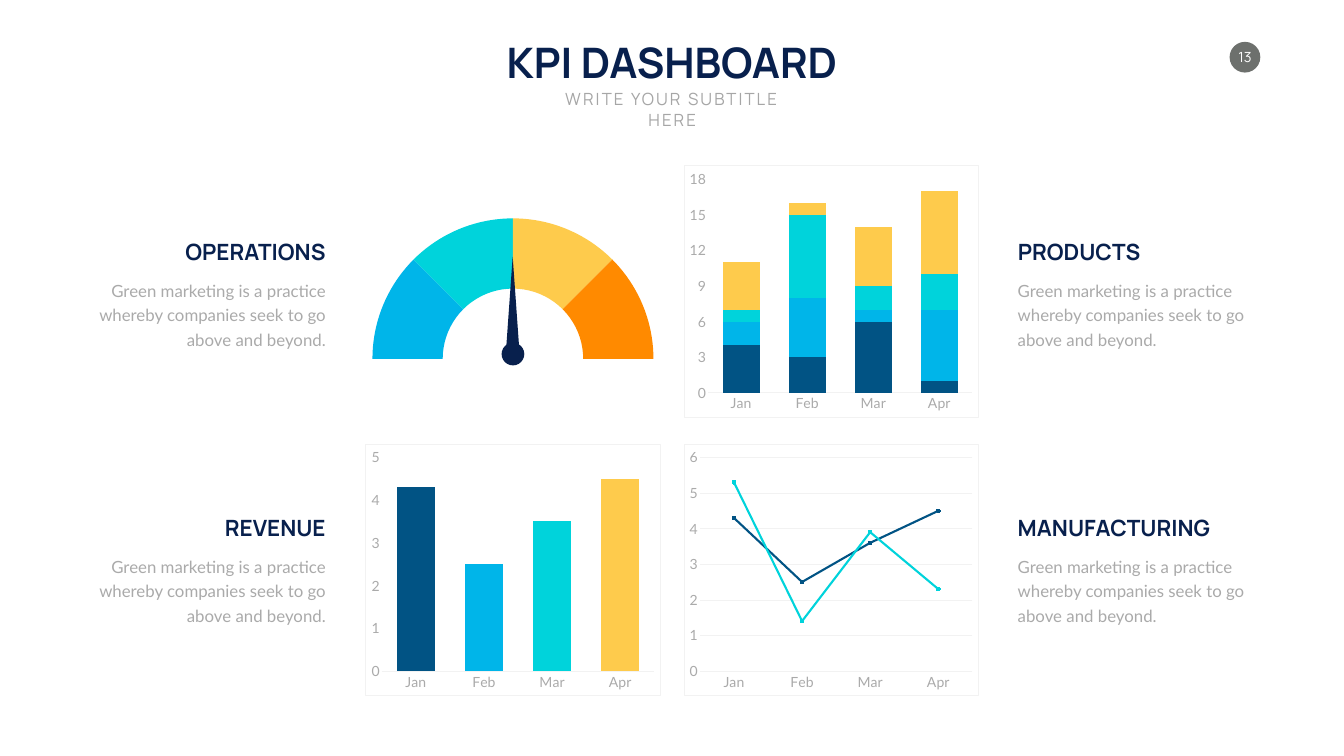
from lxml import etree
from pptx import Presentation
from pptx.chart.data import CategoryChartData
from pptx.dml.color import RGBColor
from pptx.enum import chart as ch, shapes, text
from pptx.oxml import parse_xml
from pptx.oxml.ns import nsdecls
from pptx.util import Inches, Pt

NAVY = RGBColor(0x08, 0x20, 0x4D)
BLUE = RGBColor(0x01, 0x53, 0x84)
SKY = RGBColor(0x00, 0xB5, 0xE9)
CYAN = RGBColor(0x00, 0xD3, 0xDB)
YELLOW = RGBColor(0xFE, 0xCB, 0x4C)
ORANGE = RGBColor(0xFF, 0x8A, 0x00)
GREY = RGBColor(0xAA, 0xAA, 0xAA)
SUBTITLE_GREY = RGBColor(0xA6, 0xA6, 0xA6)
BADGE_GREY = RGBColor(0x6D, 0x70, 0x6D)
PALE = RGBColor(0xF2, 0xF2, 0xF2)
WHITE = RGBColor(0xFF, 0xFF, 0xFF)

LEFT, CENTER, RIGHT = text.PP_ALIGN.LEFT, text.PP_ALIGN.CENTER, text.PP_ALIGN.RIGHT
MONTHS = ["Jan", "Feb", "Mar", "Apr"]
CHART_W, CHART_H = 5.85, 5
BODY = "Green marketing is a practice whereby companies seek to go above and beyond."

prs = Presentation()
prs.slide_width, prs.slide_height = Inches(26.66), Inches(15)
s = prs.slides.add_slide(prs.slide_layouts[6])


def add_text(box, words, size, font, color, align, bold=False, wrap=False):
    sp = s.shapes.add_textbox(*map(Inches, box))
    tf = sp.text_frame
    tf.word_wrap = wrap
    tf.auto_size = text.MSO_AUTO_SIZE.SHAPE_TO_FIT_TEXT
    p = tf.paragraphs[0]
    p.text, p.alignment = words, align
    p.font.size, p.font.name, p.font.bold = Pt(size), font, bold
    p.font.color.rgb = color
    return p


def add_chart(kind, box, cats, rows):
    """Add a chart without title or legend, in grey 20 pt Lato."""
    data = CategoryChartData()
    data.categories = cats
    for i, row in enumerate(rows, 1):
        data.add_series(f"Series {i}", row)
    chart = s.shapes.add_chart(kind, *map(Inches, box), data).chart
    chart.has_title = chart.has_legend = False
    chart.font.size, chart.font.name = Pt(20), "Lato"
    chart.font.color.rgb = GREY
    return chart


# Header and page badge
add_text((9.78, 0.67, 7.1, 1.11), "KPI DASHBOARD", 60, "Manrope", NAVY, CENTER, bold=True)
p = add_text((10.62, 1.72, 5.43, 0.5), "WRITE YOUR SUBTITLE HERE", 24, "Manrope",
             SUBTITLE_GREY, CENTER, wrap=True)
p.runs[0].font._element.set("spc", "300")

badge = s.shapes.add_shape(shapes.MSO_SHAPE.OVAL, *map(Inches, (24.39, 0.83, 0.61, 0.61)))
badge.shadow.inherit = False
badge.fill.solid()
badge.fill.fore_color.rgb = BADGE_GREY
badge.line.fill.background()
tf = badge.text_frame
tf.margin_left = tf.margin_right = tf.margin_top = tf.margin_bottom = 0
tf.word_wrap = False
tf.vertical_anchor = text.MSO_ANCHOR.MIDDLE
p = tf.paragraphs[0]
p.text, p.alignment = "13", CENTER
p.font.size, p.font.name = Pt(20), "Manrope"
p.font.color.rgb = WHITE

# Captions beside the charts: heading, heading width, outer edge, top, alignment
for heading, width, edge, top, align in [
    ("OPERATIONS", 3.06, 6.56, 4.68, RIGHT),
    ("REVENUE", 2.2, 6.56, 10.16, RIGHT),
    ("PRODUCTS", 2.65, 20.09, 4.68, LEFT),
    ("MANUFACTURING", 4.2, 20.09, 10.16, LEFT),
]:
    shift = 1 if align == RIGHT else 0
    add_text((edge - shift * width, top, width, 0.64), heading, 32, "Manrope",
             NAVY, align, bold=True)
    p = add_text((edge - shift * 4.9, top + 0.75, 4.9, 1.52), BODY, 24, "Lato",
                 GREY, align, wrap=True)
    p.line_spacing, p.space_before = Pt(35), Pt(4.8)

# Gauge: the upper half of a doughnut, with a needle
gauge = add_chart(ch.XL_CHART_TYPE.DOUGHNUT, (7.25, 4.1, CHART_W, 6.04),
                  [str(n) for n in range(1, 9)], [[12] * 8])
plot = gauge.plots[0]
for tag, value in (("firstSliceAng", 270), ("holeSize", 50)):
    for old in plot._element.xpath(f"c:{tag}"):
        plot._element.remove(old)
    plot._element.append(parse_xml(f'<c:{tag} {nsdecls("c")} val="{value}"/>'))
for i, color in enumerate([SKY, CYAN, YELLOW, ORANGE] + [None] * 4):
    fmt = plot.series[0].points[i].format
    fmt.line.fill.background()
    if color is None:
        fmt.fill.background()
    else:
        fmt.fill.solid()
        fmt.fill.fore_color.rgb = color

for kind, box in [
    (shapes.MSO_SHAPE.ISOSCELES_TRIANGLE, (10.04, 5.09, 0.26, 1.83)),
    (shapes.MSO_SHAPE.OVAL, (9.95, 6.8, 0.45, 0.45)),
]:
    sp = s.shapes.add_shape(kind, *map(Inches, box))
    sp.shadow.inherit = False
    sp.fill.solid()
    sp.fill.fore_color.rgb = NAVY
    sp.line.fill.background()

# Charts with axes
products = add_chart(ch.XL_CHART_TYPE.COLUMN_STACKED, (13.56, 3.28, CHART_W, CHART_H), MONTHS,
                     [(4, 3, 6, 1), (2, 5, 1, 6), (1, 7, 2, 3), (4, 1, 5, 7)])
revenue = add_chart(ch.XL_CHART_TYPE.COLUMN_CLUSTERED, (7.25, 8.8, CHART_W, CHART_H), MONTHS,
                    [(4.3, 2.5, 3.5, 4.5)])
manufacturing = add_chart(ch.XL_CHART_TYPE.LINE_MARKERS, (13.56, 8.8, CHART_W, CHART_H), MONTHS,
                          [(4.3, 2.5, 3.6, 4.5), (5.3, 1.4, 3.9, 2.3)])

for chart, top, step in [(products, 18, 3), (revenue, 5, 1), (manufacturing, 6, 1)]:
    cat, val = chart.category_axis, chart.value_axis
    for axis in (cat, val):
        axis.major_tick_mark = axis.minor_tick_mark = ch.XL_TICK_MARK.NONE
        axis.tick_labels.font.size, axis.tick_labels.font.name = Pt(20), "Lato"
        axis.tick_labels.font.color.rgb = GREY
    cat.format.line.color.rgb, cat.format.line.width = PALE, Pt(0.75)
    val.format.line.fill.background()
    val.minimum_scale, val.maximum_scale, val.major_unit = 0, top, step
    val.tick_labels.number_format = "General"
    val.tick_labels.number_format_is_linked = False
    val.has_major_gridlines = chart is manufacturing
    chart._chartSpace.find("{*}chart").addnext(parse_xml(
        f'<c:spPr {nsdecls("c", "a")}><a:noFill/><a:ln w="9525"><a:solidFill>'
        f'<a:srgbClr val="{PALE}"/></a:solidFill></a:ln></c:spPr>'))

grid = manufacturing.value_axis.major_gridlines.format.line
grid.color.rgb, grid.width = PALE, Pt(0.75)

products.plots[0].overlap = 100
for chart in (products, revenue):
    chart.plots[0].gap_width = 80
    chart.plots[0].vary_by_categories = False
bars = list(products.plots[0].series) + [revenue.plots[0].series[0].points[i] for i in range(4)]
for bar, color in zip(bars, [BLUE, SKY, CYAN, YELLOW] * 2):
    bar.format.fill.solid()
    bar.format.fill.fore_color.rgb = color

for series, color in zip(manufacturing.plots[0].series, (BLUE, CYAN)):
    series.smooth = False
    series.format.line.color.rgb, series.format.line.width = color, Pt(3)
    series.marker.style, series.marker.size = ch.XL_MARKER_STYLE.CIRCLE, 5
    series.marker.format.fill.solid()
    series.marker.format.fill.fore_color.rgb = color
    series.marker.format.line.color.rgb = color

prs.save("out.pptx")
